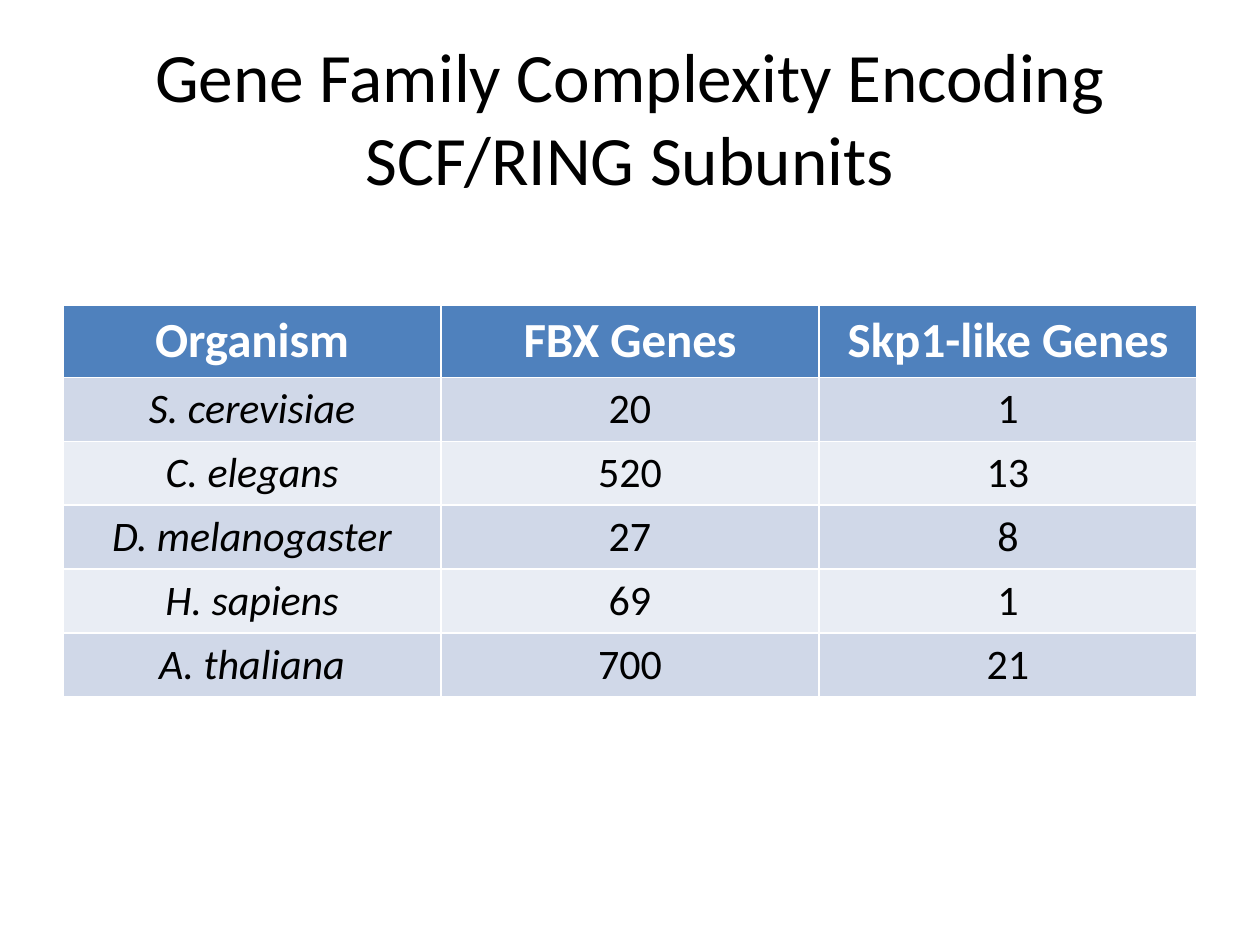
from dataclasses import dataclass

from pptx import Presentation
from pptx.dml.color import RGBColor as RGB
from pptx.enum.text import MSO_ANCHOR as Anchor, MSO_AUTO_SIZE as AutoSize, PP_ALIGN as Align
from pptx.util import Inches, Pt


@dataclass(frozen=True)
class Theme:
    font: str = "Calibri"
    ink: str = "000000"
    paper: str = "FFFFFF"
    header: str = "4F81BD"
    bands: tuple = ("D0D8E8", "E9EDF4")
    title_size: float = 39.6
    header_size: float = 28
    body_size: float = 24


theme = Theme()


def write(frame, text, *, size, color=theme.ink, bold=False, italic=False):
    """Put one centred, formatted paragraph into a text frame."""
    paragraph = frame.paragraphs[0]
    paragraph.alignment = Align.CENTER
    run = paragraph.add_run()
    run.text = text
    run.font.name = theme.font
    run.font.size = Pt(size)
    run.font.bold = bold
    run.font.italic = italic
    run.font.color.rgb = RGB.from_string(color)


# Slide
deck = Presentation()
deck.slide_width, deck.slide_height = Inches(10), Inches(7.5)
slide = deck.slides.add_slide(deck.slide_layouts[5])

# Title
heading = slide.shapes.title
heading.left, heading.top = Inches(0.5), Inches(0.3)
heading.width, heading.height = Inches(9), Inches(1.25)
heading.text_frame.auto_size = AutoSize.NONE
heading.text_frame.word_wrap = True
heading.text_frame.vertical_anchor = Anchor.MIDDLE
write(heading.text_frame, "Gene Family Complexity Encoding SCF/RING Subunits",
      size=theme.title_size)

# Gene counts; the default table style draws the white rules
gene_counts = [
    ("Organism", "FBX Genes", "Skp1-like Genes"),
    ("S. cerevisiae", "20", "1"),
    ("C. elegans", "520", "13"),
    ("D. melanogaster", "27", "8"),
    ("H. sapiens", "69", "1"),
    ("A. thaliana", "700", "21"),
]
genes = slide.shapes.add_table(len(gene_counts), 3, Inches(0.5), Inches(2.42),
                               Inches(9), Inches(3.07)).table
for r, record in enumerate(gene_counts):
    is_header = r == 0
    genes.rows[r].height = Inches(0.57 if is_header else 0.5)
    for c, value in enumerate(record):
        cell = genes.cell(r, c)
        cell.fill.solid()
        cell.fill.fore_color.rgb = RGB.from_string(
            theme.header if is_header else theme.bands[(r - 1) % 2])
        write(cell.text_frame, value,
              size=theme.header_size if is_header else theme.body_size,
              color=theme.paper if is_header else theme.ink,
              bold=is_header, italic=not is_header and c == 0)

deck.save("out.pptx")
